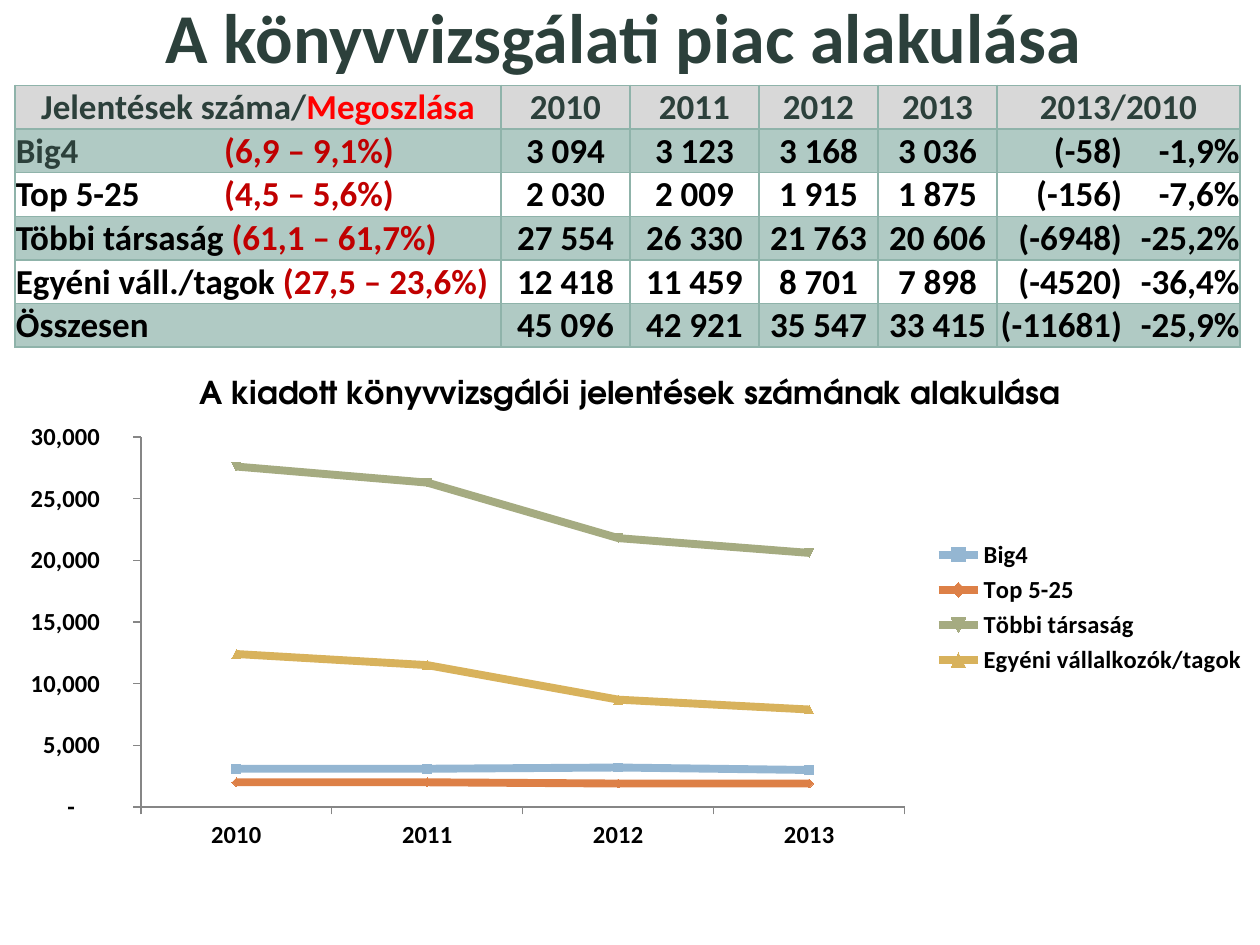
from lxml import etree
from pptx import Presentation
from pptx import util as u
from pptx.chart.data import CategoryChartData
from pptx.dml.color import RGBColor
from pptx.enum import chart as charts, text
from pptx.oxml import parse_xml
from pptx.oxml.ns import nsdecls, qn

DARK_GREEN = RGBColor(0x2C, 0x40, 0x3B)
HEADER_GRAY = RGBColor(0xD8, 0xD8, 0xD8)
BAND_GREEN = RGBColor(0xB0, 0xCA, 0xC4)
BORDER_GREEN = RGBColor(0x8F, 0xB3, 0xAA)
RED = RGBColor(0xFF, 0, 0)
DARK_RED = RGBColor(0xC0, 0, 0)
BLACK = RGBColor(0, 0, 0)
AXIS_GRAY = RGBColor(0x86, 0x86, 0x86)
SERIES_COLORS = [RGBColor(0x94, 0xB6, 0xD2), RGBColor(0xDD, 0x80, 0x47),
                 RGBColor(0xA5, 0xAB, 0x81), RGBColor(0xD8, 0xB2, 0x5C)]

BODY_FONT = "Calibri"
CHART_FONT = "TeX Gyre Adventor"
LEFT, CENTER = text.PP_ALIGN.LEFT, text.PP_ALIGN.CENTER

YEARS = ["2010", "2011", "2012", "2013"]
# Label, share, reports per year, change in number, change in percent
REPORTS = [
    ("Big4\t", "(6,9 – 9,1%)", ["3 094", "3 123", "3 168", "3 036"], "(-58)", "-1,9%"),
    ("Top 5-25\t", "(4,5 – 5,6%)", ["2 030", "2 009", "1 915", "1 875"], "(-156)", "-7,6%"),
    ("Többi társaság ", "(61,1 – 61,7%)", ["27 554", "26 330", "21 763", "20 606"],
     "(-6948)", "-25,2%"),
    ("Egyéni váll./tagok ", "(27,5 – 23,6%)", ["12 418", "11 459", "8 701", "7 898"],
     "(-4520)", "-36,4%"),
    ("Összesen", "", ["45 096", "42 921", "35 547", "33 415"], "(-11681)", "-25,9%"),
]
SERIES_NAMES = ["Big4", "Top 5-25", "Többi társaság", "Egyéni vállalkozók/tagok"]
COLUMN_WIDTHS = [9.8, 2.6, 2.6, 2.4, 2.4, 4.9]
ROW_HEIGHT = 0.88
SHARE_TABS = [("l", 4.2)]
CHANGE_TABS = [("r", 2.52), ("r", 4.89)]
NUMBER_FORMAT = r'_-* #,##0\ _F_t_-;\-* #,##0\ _F_t_-;_-* "-"??\ _F_t_-;_-@_-'


def style_font(font, size, color, name=BODY_FONT):
    font.size, font.bold, font.name = u.Pt(size), True, name
    font.color.rgb = color


def add_run(paragraph, content, size, color):
    run = paragraph.add_run()
    run.text = content
    style_font(run.font, size, color)


def add_tabs(paragraph, tabs):
    tab_list = etree.SubElement(paragraph._p.get_or_add_pPr(), qn("a:tabLst"))
    for alignment, position in tabs:
        etree.SubElement(tab_list, qn("a:tab"), pos=str(u.Cm(position)), algn=alignment)


def add_title(slide, left, top, width, height):
    shape = slide.shapes.add_textbox(u.Cm(left), u.Cm(top), u.Cm(width), u.Cm(height))
    frame = shape.text_frame
    frame.word_wrap = True
    frame.vertical_anchor = text.MSO_ANCHOR.MIDDLE
    paragraph = frame.paragraphs[0]
    paragraph.alignment = CENTER
    add_run(paragraph, "A könyvvizsgálati piac alakulása", 40, DARK_GREEN)


def add_borders(cell):
    properties = cell._tc.get_or_add_tcPr()
    for index, side in enumerate(("lnL", "lnR", "lnT", "lnB")):
        properties.insert(index, parse_xml(
            f'<a:{side} {nsdecls("a")} w="{u.Pt(1)}"><a:solidFill>'
            f'<a:srgbClr val="{BORDER_GREEN}"/></a:solidFill></a:{side}>'))


def fill_cell(cell, runs, fill, alignment=CENTER, tabs=(), margin=0):
    """Write (text, colour) runs into a cell; a fill of None leaves it clear."""
    cell.margin_left = cell.margin_right = u.Cm(margin)
    cell.margin_top = cell.margin_bottom = 0
    cell.vertical_anchor = text.MSO_ANCHOR.BOTTOM
    if fill is None:
        cell.fill.background()
    else:
        cell.fill.solid()
        cell.fill.fore_color.rgb = fill
    add_borders(cell)
    paragraph = cell.text_frame.paragraphs[0]
    paragraph.alignment = alignment
    if tabs:
        add_tabs(paragraph, tabs)
    for content, color in runs:
        if content:
            add_run(paragraph, content, 20, color)


def add_report_table(slide, left, top):
    row_count = len(REPORTS) + 1
    table = slide.shapes.add_table(
        row_count, len(COLUMN_WIDTHS), u.Cm(left), u.Cm(top),
        u.Cm(sum(COLUMN_WIDTHS)), u.Cm(ROW_HEIGHT * row_count)).table
    table.first_row = table.horz_banding = False
    for column, width in zip(table.columns, COLUMN_WIDTHS):
        column.width = u.Cm(width)
    for row in table.rows:
        row.height = u.Cm(ROW_HEIGHT)

    fill_cell(table.cell(0, 0), [("Jelentések száma/", DARK_GREEN), ("Megoszlása", RED)],
              HEADER_GRAY)
    for column, heading in enumerate(YEARS + ["2013/2010"], 1):
        fill_cell(table.cell(0, column), [(heading, DARK_GREEN)], HEADER_GRAY)

    for row, (label, share, counts, change, percent) in enumerate(REPORTS, 1):
        fill = BAND_GREEN if row % 2 else None
        label_color = DARK_GREEN if row == 1 else BLACK
        fill_cell(table.cell(row, 0), [(label, label_color), (share, DARK_RED)], fill,
                  LEFT, SHARE_TABS, 0.02)
        for column, count in enumerate(counts, 1):
            fill_cell(table.cell(row, column), [(count, BLACK)], fill)
        fill_cell(table.cell(row, 5), [(f"\t{change}\t{percent}", BLACK)], fill,
                  LEFT, CHANGE_TABS)


def place_plot(chart, chart_width, chart_height, left, top, width, height):
    """Fix the inner plot area, in the same unit as the chart's size."""
    plot_area = chart._chartSpace.chart.plotArea
    for old_layout in plot_area.findall(qn("c:layout")):
        plot_area.remove(old_layout)
    fractions = {"x": left / chart_width, "y": top / chart_height,
                 "w": width / chart_width, "h": height / chart_height}
    values = "".join(f'<c:{key} val="{value:.4f}"/>' for key, value in fractions.items())
    plot_area.insert(0, parse_xml(
        f'<c:layout {nsdecls("c")}><c:manualLayout><c:layoutTarget val="inner"/>'
        f'<c:xMode val="edge"/><c:yMode val="edge"/>{values}'
        '</c:manualLayout></c:layout>'))


def add_report_chart(slide, left, top, width, height):
    data = CategoryChartData()
    data.categories = YEARS
    for name, report in zip(SERIES_NAMES, REPORTS):
        data.add_series(name, [round(int(count.replace(" ", "")), -2)
                               for count in report[2]])
    chart = slide.shapes.add_chart(
        charts.XL_CHART_TYPE.LINE_MARKERS, u.Cm(left), u.Cm(top),
        u.Cm(width), u.Cm(height), data).chart
    chart.font.name, chart.font.size = CHART_FONT, u.Pt(10)
    chart.font.color.rgb = BLACK

    chart.has_title = True
    title_run = chart.chart_title.text_frame.paragraphs[0].add_run()
    title_run.text = "A kiadott könyvvizsgálói jelentések számának alakulása"
    style_font(title_run.font, 18, BLACK, CHART_FONT)

    chart.has_legend = True
    chart.legend.position = charts.XL_LEGEND_POSITION.RIGHT
    chart.legend.include_in_layout = False
    style_font(chart.legend.font, 14, BLACK)

    for axis in (chart.category_axis, chart.value_axis):
        axis.has_major_gridlines = False
        axis.major_tick_mark = charts.XL_TICK_MARK.OUTSIDE
        axis.format.line.color.rgb = AXIS_GRAY
        style_font(axis.tick_labels.font, 14, BLACK)
    value_axis = chart.value_axis
    value_axis.minimum_scale, value_axis.maximum_scale = 0, 30000
    value_axis.major_unit = 5000
    value_axis.tick_labels.number_format = NUMBER_FORMAT
    value_axis.tick_labels.number_format_is_linked = False

    chart.plots[0].vary_by_categories = False
    for series, color in zip(chart.plots[0].series, SERIES_COLORS):
        series.smooth = False
        series.format.line.width = u.Pt(4.5)
        series.format.line.color.rgb = color
        series.marker.size = 5
        series.marker.format.fill.solid()
        series.marker.format.fill.fore_color.rgb = color
        series.marker.format.line.color.rgb = color
    place_plot(chart, width, height, 2.84, 1.67, 15.4, 7.46)


def main():
    presentation = Presentation()
    presentation.slide_width, presentation.slide_height = u.Cm(25.4), u.Cm(19.05)
    slide = presentation.slides.add_slide(presentation.slide_layouts[6])
    add_title(slide, 1.14, -0.88, 22.86, 3.18)
    add_report_table(slide, 0.3, 1.72)
    add_report_chart(slide, 0, 7.14, 25.4, 10.21)
    presentation.save("out.pptx")


if __name__ == "__main__":
    main()
